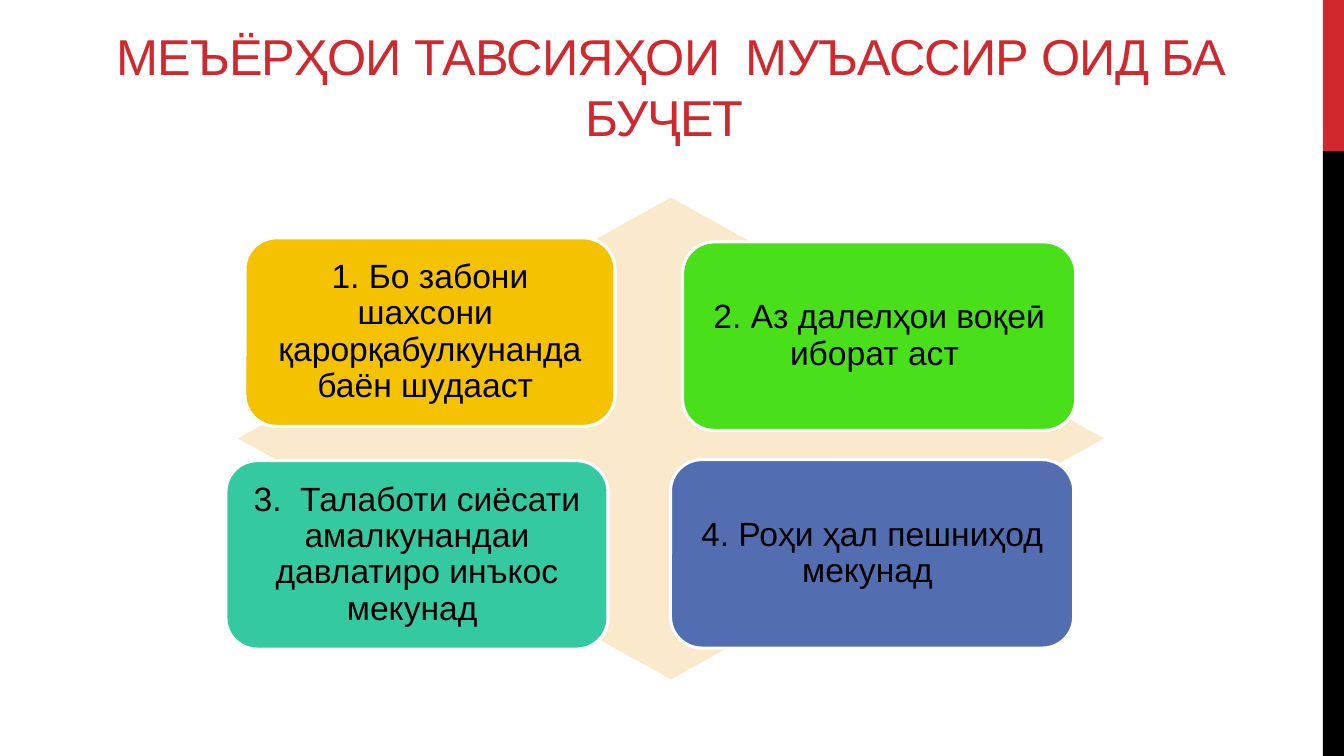
import dataclasses

import pptx
import pptx.dml.color
import pptx.enum.shapes
import pptx.enum.text
import pptx.util

Inches = pptx.util.Inches
Pt = pptx.util.Pt
SHAPE = pptx.enum.shapes.MSO_SHAPE
ANCHOR = pptx.enum.text.MSO_ANCHOR


@dataclasses.dataclass(frozen=True)
class Theme:
    """Colours, font and type sizes of the slide."""
    font: str = "Arial"
    title_size: int = 36
    card_size: int = 24
    red: str = "D1282E"
    black: str = "000000"
    white: str = "FFFFFF"
    cream: str = "FBE9CC"
    yellow: str = "F5C201"
    green: str = "49DF1B"
    teal: str = "35C9A2"
    blue: str = "526DB0"


THEME = Theme()
TITLE = "МЕЪЁРҲОИ ТАВСИЯҲОИ  МУЪАССИР ОИД БА БУҶЕТ "
CRITERIA = [
    ("1. Бо забони шахсони  қарорқабулкунанда баён шудааст ", THEME.yellow, (0.07, 0.4, 3.67)),
    ("2. Аз далелҳои воқеӣ иборат аст ", THEME.green, (4.41, 0.44, 3.9)),
    ("3.  Талаботи сиёсати амалкунандаи давлатиро инъкос мекунад ", THEME.teal, (-0.12, 2.61, 3.79)),
    ("4. Роҳи ҳал пешниҳод мекунад ", THEME.blue, (4.29, 2.6, 4)),
]
CARD_HEIGHT = 1.87


def rgb(code):
    """Turn a hex code into a colour."""
    return pptx.dml.color.RGBColor.from_string(code)


def write(frame, text, size, color, anchor, inset, line_spacing=1.0, space_after=0, tracking=0):
    """Put one centred, formatted paragraph into a text frame."""
    frame.word_wrap = True
    frame.auto_size = pptx.enum.text.MSO_AUTO_SIZE.NONE
    frame.vertical_anchor = anchor
    frame.margin_left = frame.margin_right = Inches(inset[0])
    frame.margin_top = frame.margin_bottom = Inches(inset[1])
    paragraph = frame.paragraphs[0]
    paragraph.alignment = pptx.enum.text.PP_ALIGN.CENTER
    paragraph.line_spacing = line_spacing
    paragraph.space_before = Pt(0)
    paragraph.space_after = Pt(space_after)
    run = paragraph.add_run()
    run.text = text
    run.font.name = THEME.font
    run.font.size = Pt(size)
    run.font.color.rgb = rgb(color)
    run.font._element.set("spc", str(round(tracking * 100)))


def add_block(slide, kind, box, fill, outline=None):
    """Draw a flat preset shape in the box, with an optional outline."""
    block = slide.shapes.add_shape(kind, *map(Inches, box))
    block.shadow.inherit = False
    block.fill.solid()
    block.fill.fore_color.rgb = rgb(fill)
    if outline:
        block.line.color.rgb = rgb(outline)
        block.line.width = Pt(2.25)
    else:
        block.line.fill.background()
    return block


def add_side_band(slide, box):
    """Draw the red and black band, one fifth of it red."""
    left, top, width, height = box
    red_height = height / 5
    add_block(slide, SHAPE.RECTANGLE, (left, top, width, red_height), THEME.red)
    add_block(slide, SHAPE.RECTANGLE, (left, top + red_height, width, height - red_height), THEME.black)


def add_title(slide, box):
    """Place and fill the title placeholder."""
    heading = slide.shapes.title
    heading.left, heading.top, heading.width, heading.height = map(Inches, box)
    write(heading.text_frame, TITLE, THEME.title_size, THEME.red, ANCHOR.BOTTOM,
          inset=(0.1, 0.05), tracking=-0.6)


def add_criteria(slide, box):
    """Draw the diamond and the four criteria cards over it."""
    left, top = box[:2]
    add_block(slide, SHAPE.DIAMOND, box, THEME.cream)
    for text, fill, (dx, dy, width) in CRITERIA:
        card_box = (left + dx, top + dy, width, CARD_HEIGHT)
        card = add_block(slide, SHAPE.ROUNDED_RECTANGLE, card_box, fill, THEME.white)
        write(card.text_frame, text, THEME.card_size, THEME.black, ANCHOR.MIDDLE,
              inset=(0.1, 0.1), line_spacing=0.9, space_after=8.4)


def main():
    """Build and save the slide."""
    deck = pptx.Presentation()
    deck.slide_width, deck.slide_height = Inches(13.33), Inches(7.5)
    slide = deck.slides.add_slide(deck.slide_layouts[5])
    add_side_band(slide, (13.12, 0, 0.21, 7.5))
    add_title(slide, (0.71, 0, 11.89, 1.5))
    add_criteria(slide, (2.36, 1.96, 8.59, 4.78))
    deck.save("out.pptx")


if __name__ == "__main__":
    main()
